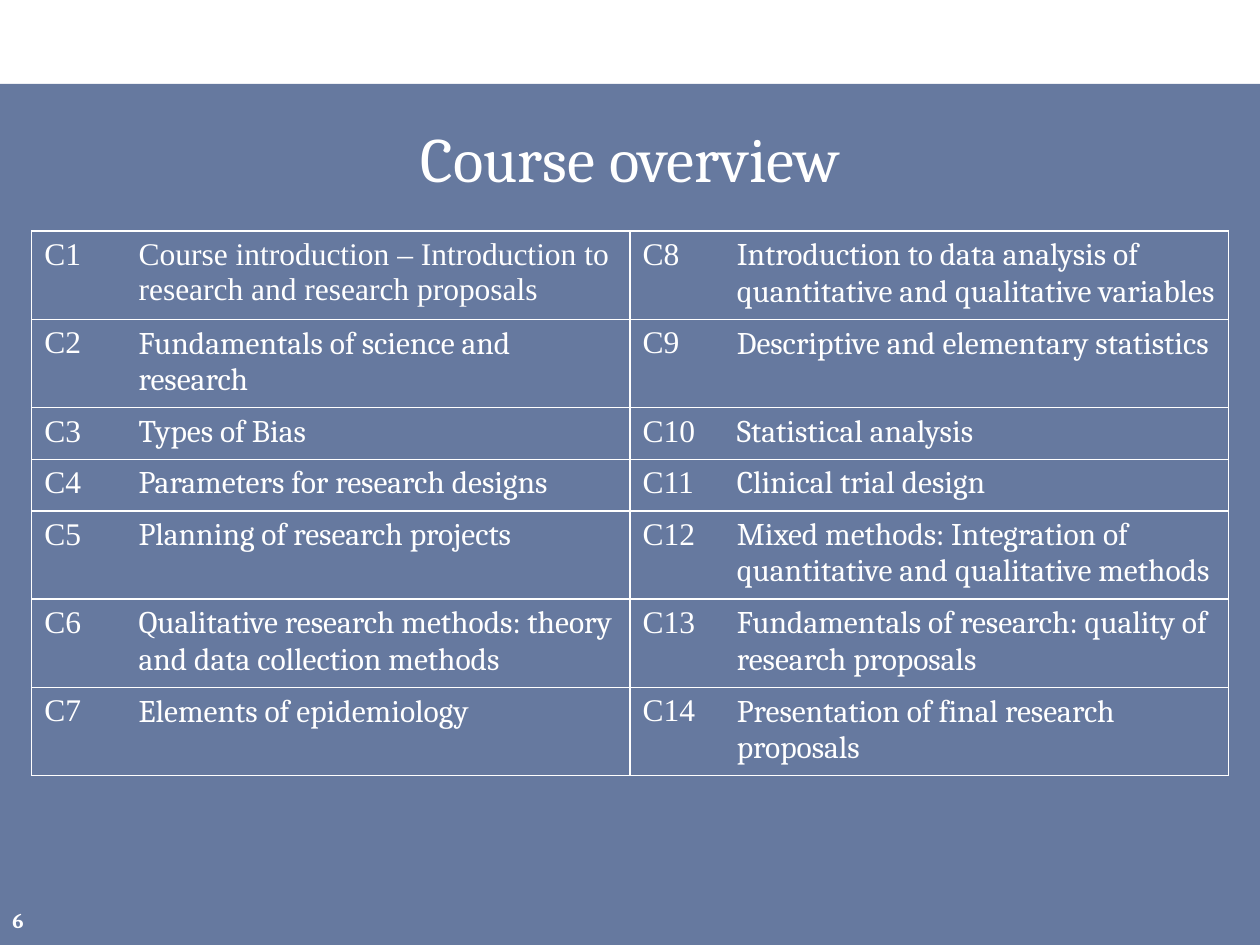
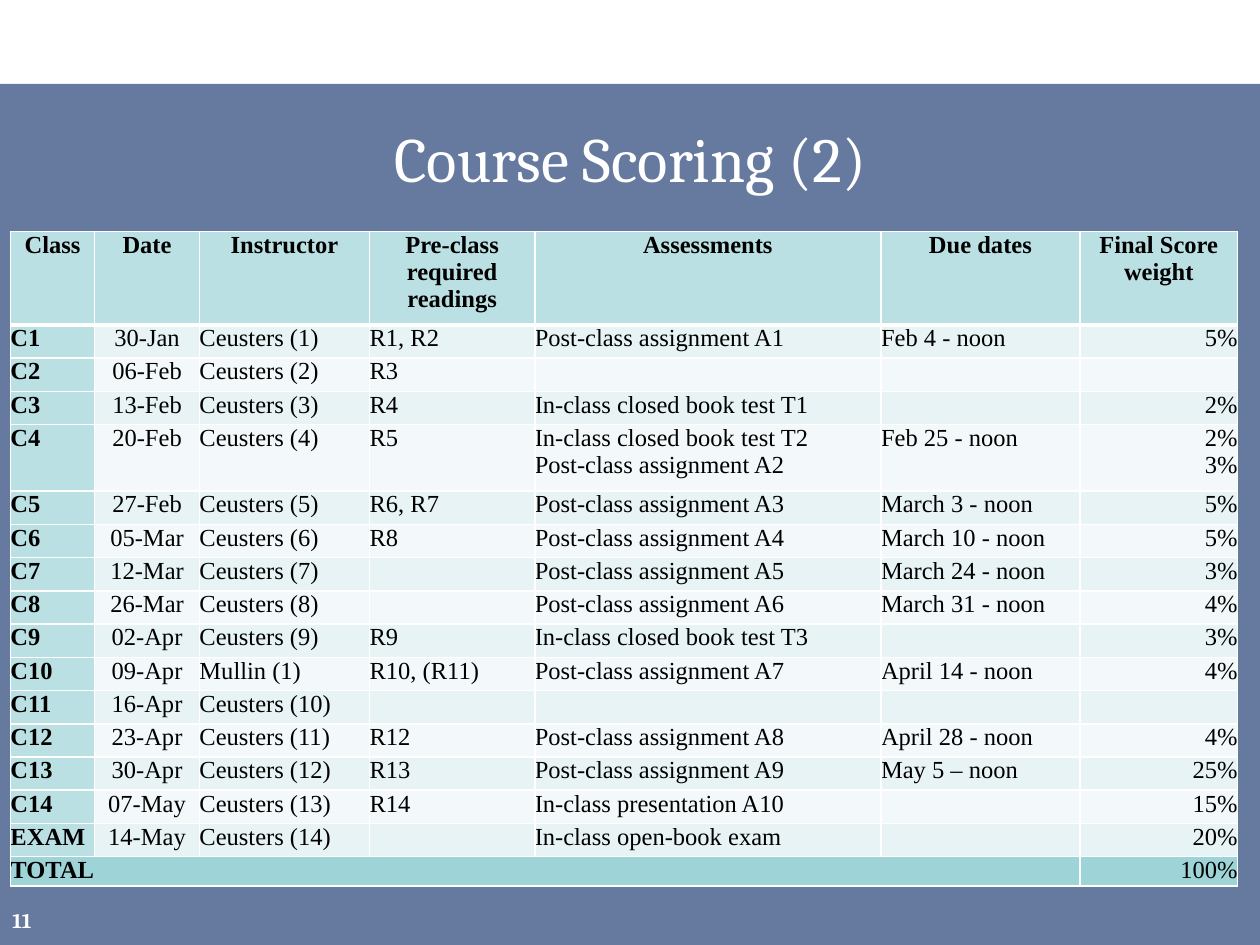
"""Build the course overview and course scoring slides."""
from dataclasses import dataclass, field

from lxml import etree
from pptx import Presentation
from pptx.dml.color import RGBColor
from pptx.enum.shapes import MSO_SHAPE
from pptx.enum.text import MSO_ANCHOR, PP_ALIGN
from pptx.oxml.ns import qn
from pptx.util import Cm, Pt

LEFT, CENTER, RIGHT = PP_ALIGN.LEFT, PP_ALIGN.CENTER, PP_ALIGN.RIGHT
MIDDLE = MSO_ANCHOR.MIDDLE
RECTANGLE = MSO_SHAPE.RECTANGLE

SERIF, TIMES = "Cambria", "Times New Roman"
WHITE, BLACK, NAVY = "FFFFFF", "000000", "002060"
HEADING_FILL, TOTAL_FILL = "BBE0E3", "9ED3D7"
BAND_FILLS = ("E7F3F4", "F3F9FA")
SLIDE_WIDTH, SLIDE_HEIGHT, BAND_TOP = 25.4, 19.05, 1.69

CLASSES = [
    "Course introduction – Introduction to research and research proposals",
    "Fundamentals of science and research",
    "Types of Bias",
    "Parameters for research designs",
    "Planning of research projects",
    "Qualitative research methods: theory and data collection methods",
    "Elements of epidemiology",
    "Introduction to data analysis of quantitative and qualitative variables",
    "Descriptive and elementary statistics",
    "Statistical analysis",
    "Clinical trial design",
    "Mixed methods: Integration of quantitative and qualitative methods",
    "Fundamentals of research: quality of research proposals",
    "Presentation of final research proposals",
]
OVERVIEW_WIDTHS = (1.9, 10.16, 1.9, 10.16)
OVERVIEW_ROW = 1.04

SCORING_HEADINGS = ("Class", "Date", "Instructor", "Pre-class\nrequired readings",
                    "Assessments", "Due dates", "Final Score weight")
SCORING = [
    ("C1", "30-Jan", "Ceusters (1)", "R1, R2", "Post-class assignment A1", "Feb 4 - noon", "5%"),
    ("C2", "06-Feb", "Ceusters (2)", "R3", "", "", ""),
    ("C3", "13-Feb", "Ceusters (3)", "R4", "In-class closed book test T1", "", "2%"),
    ("C4", "20-Feb", "Ceusters (4)", "R5",
     "In-class closed book test T2\nPost-class assignment A2", "Feb 25 - noon", "2%\n3%"),
    ("C5", "27-Feb", "Ceusters (5)", "R6, R7", "Post-class assignment A3", "March 3 - noon", "5%"),
    ("C6", "05-Mar", "Ceusters (6)", "R8", "Post-class assignment A4", "March 10 - noon", "5%"),
    ("C7", "12-Mar", "Ceusters (7)", "", "Post-class assignment A5", "March 24 - noon", "3%"),
    ("C8", "26-Mar", "Ceusters (8)", "", "Post-class assignment A6", "March 31 - noon", "4%"),
    ("C9", "02-Apr", "Ceusters (9)", "R9", "In-class closed book test T3", "", "3%"),
    ("C10", "09-Apr", "Mullin (1)", "R10, (R11)", "Post-class assignment A7",
     "April 14 - noon", "4%"),
    ("C11", "16-Apr", "Ceusters (10)", "", "", "", ""),
    ("C12", "23-Apr", "Ceusters (11)", "R12", "Post-class assignment A8", "April 28 - noon", "4%"),
    ("C13", "30-Apr", "Ceusters (12)", "R13", "Post-class assignment A9", "May 5 – noon", "25%"),
    ("C14", "07-May", "Ceusters (13)", "R14", "In-class presentation A10", "", "15%"),
    ("EXAM", "14-May", "Ceusters (14)", "", "In-class open-book exam", "", "20%"),
]
TOTAL = ("TOTAL", "", "", "", "", "", "100%")
SCORING_WIDTHS = (1.7, 2.11, 3.43, 3.33, 6.98, 4.01, 3.18)
SCORING_ALIGNS = (LEFT, CENTER, LEFT, LEFT, LEFT, LEFT, RIGHT)
HEADING_ROW, SCORING_ROW, TOTAL_ROW = 1.88, 0.67, 0.33


@dataclass(frozen=True)
class TextStyle:
    """Font and alignment of a text."""
    font: str
    size: float
    color: str = WHITE
    bold: bool = False
    align: PP_ALIGN = LEFT


@dataclass(frozen=True)
class CellLook:
    """Content and appearance of one table cell."""
    text: str
    style: TextStyle
    fill: str = ""
    inset: bool = True
    borders: dict[str, float] = field(default_factory=dict)


TITLE_STYLE = TextStyle(SERIF, 36, align=CENTER)
NUMBER_STYLE = TextStyle(SERIF, 12, bold=True)


def rgb(color: str) -> RGBColor:
    """Turn a hex string into a colour."""
    return RGBColor.from_string(color)


def write(frame, text: str, style: TextStyle) -> None:
    """Fill a text frame, one paragraph a line."""
    frame.word_wrap = True
    for index, line in enumerate(text.split("\n")):
        paragraph = frame.add_paragraph() if index else frame.paragraphs[0]
        if line:
            paragraph.add_run().text = line
        paragraph.alignment = style.align
        font = paragraph.font
        font.name, font.size, font.bold = style.font, Pt(style.size), style.bold
        font.color.rgb = rgb(style.color)


def add_label(slide, box: tuple[float, ...], text: str, style: TextStyle) -> None:
    """Add a vertically centred text box."""
    frame = slide.shapes.add_textbox(*map(Cm, box)).text_frame
    frame.vertical_anchor = MIDDLE
    write(frame, text, style)


def add_base(deck, title: str, number: int):
    """Add a slide with its band, title and number."""
    slide = deck.slides.add_slide(deck.slide_layouts[6])
    band = slide.shapes.add_shape(
        RECTANGLE, 0, Cm(BAND_TOP), Cm(SLIDE_WIDTH), Cm(SLIDE_HEIGHT - BAND_TOP))
    band.shadow.inherit = False
    band.line.fill.background()
    band.fill.solid()
    band.fill.fore_color.rgb = rgb(NAVY)
    tint = next(band.fill._xPr.iter(qn("a:srgbClr")))
    etree.SubElement(tint, qn("a:alpha"), val="60000")
    add_label(slide, (0.64, 2.12, 24.13, 2.12), title, TITLE_STYLE)
    add_label(slide, (0, 18.03, 1.27, 1.02), str(number), NUMBER_STYLE)
    return slide


def draw_cell(cell, look: CellLook) -> None:
    """Apply text, borders and fill to a cell."""
    write(cell.text_frame, look.text, look.style)
    if not look.inset:
        cell.margin_left = cell.margin_right = cell.margin_top = cell.margin_bottom = 0
    properties = cell._tc.get_or_add_tcPr()
    for side in "LRTB":
        width = look.borders.get(side, 0)
        edge = etree.SubElement(properties, qn(f"a:ln{side}"), w=str(Pt(width)))
        if width:
            paint = etree.SubElement(edge, qn("a:solidFill"))
            etree.SubElement(paint, qn("a:srgbClr"), val=WHITE)
        else:
            etree.SubElement(edge, qn("a:noFill"))
    if look.fill:
        cell.fill.solid()
        cell.fill.fore_color.rgb = rgb(look.fill)
    else:
        cell.fill.background()


def draw_table(slide, left: float, top: float, widths: tuple[float, ...],
               heights: list[float], looks: list[list[CellLook]]):
    """Add a table drawn from its cell looks."""
    table = slide.shapes.add_table(
        len(heights), len(widths), Cm(left), Cm(top),
        Cm(sum(widths)), Cm(sum(heights))).table
    table.first_row = table.horz_banding = False
    for column, width in zip(table.columns, widths):
        column.width = Cm(width)
    for row, height, row_looks in zip(table.rows, heights, looks):
        row.height = Cm(height)
        for cell, look in zip(row.cells, row_looks):
            draw_cell(cell, look)
    return table


def overview_pair(index: int) -> list[CellLook]:
    """Describe the code and topic cells of a class."""
    code_style = TextStyle(TIMES, 18)
    topic_style = TextStyle(SERIF if index else TIMES, 18)
    return [
        CellLook(f"C{index + 1}", code_style, borders={"L": 1, "T": 1, "B": 1}),
        CellLook(CLASSES[index], topic_style, borders={"R": 1, "T": 1, "B": 1}),
    ]


def scoring_row(row: int, texts: tuple[str, ...]) -> list[CellLook]:
    """Describe one row of the scoring table."""
    heading, total = row == 0, row > len(SCORING)
    borders = {"L": 1, "R": 1, "T": 3 if row == 1 else 1, "B": 3 if heading else 1}
    looks = []
    for column, text in enumerate(texts):
        if total:
            fill = TOTAL_FILL
        elif heading or column == 0:
            fill = HEADING_FILL
        else:
            fill = BAND_FILLS[(row - 1) % 2]
        style = TextStyle(TIMES, 14, BLACK, heading or column == 0,
                          CENTER if heading else SCORING_ALIGNS[column])
        looks.append(CellLook(text, style, fill, False, borders))
    return looks


def build_overview(deck) -> None:
    """Add the course overview slide."""
    slide = add_base(deck, "Course overview", 6)
    half = len(CLASSES) // 2
    looks = [overview_pair(row) + overview_pair(row + half) for row in range(half)]
    draw_table(slide, 0.64, 4.66, OVERVIEW_WIDTHS, [OVERVIEW_ROW] * half, looks)


def build_scoring(deck) -> None:
    """Add the course scoring slide."""
    slide = add_base(deck, "Course Scoring (2)", 11)
    rows = [SCORING_HEADINGS, *SCORING, TOTAL]
    looks = [scoring_row(row, texts) for row, texts in enumerate(rows)]
    heights = [SCORING_ROW * (1 + texts[-1].count("\n")) for texts in SCORING]
    table = draw_table(slide, 0.21, 4.67, SCORING_WIDTHS,
                       [HEADING_ROW, *heights, TOTAL_ROW], looks)
    last = len(rows) - 1
    table.cell(last, 0).merge(table.cell(last, 5))


def main() -> None:
    """Build and save the presentation."""
    deck = Presentation()
    deck.slide_width, deck.slide_height = Cm(SLIDE_WIDTH), Cm(SLIDE_HEIGHT)
    build_overview(deck)
    build_scoring(deck)
    deck.save("out.pptx")


if __name__ == "__main__":
    main()
